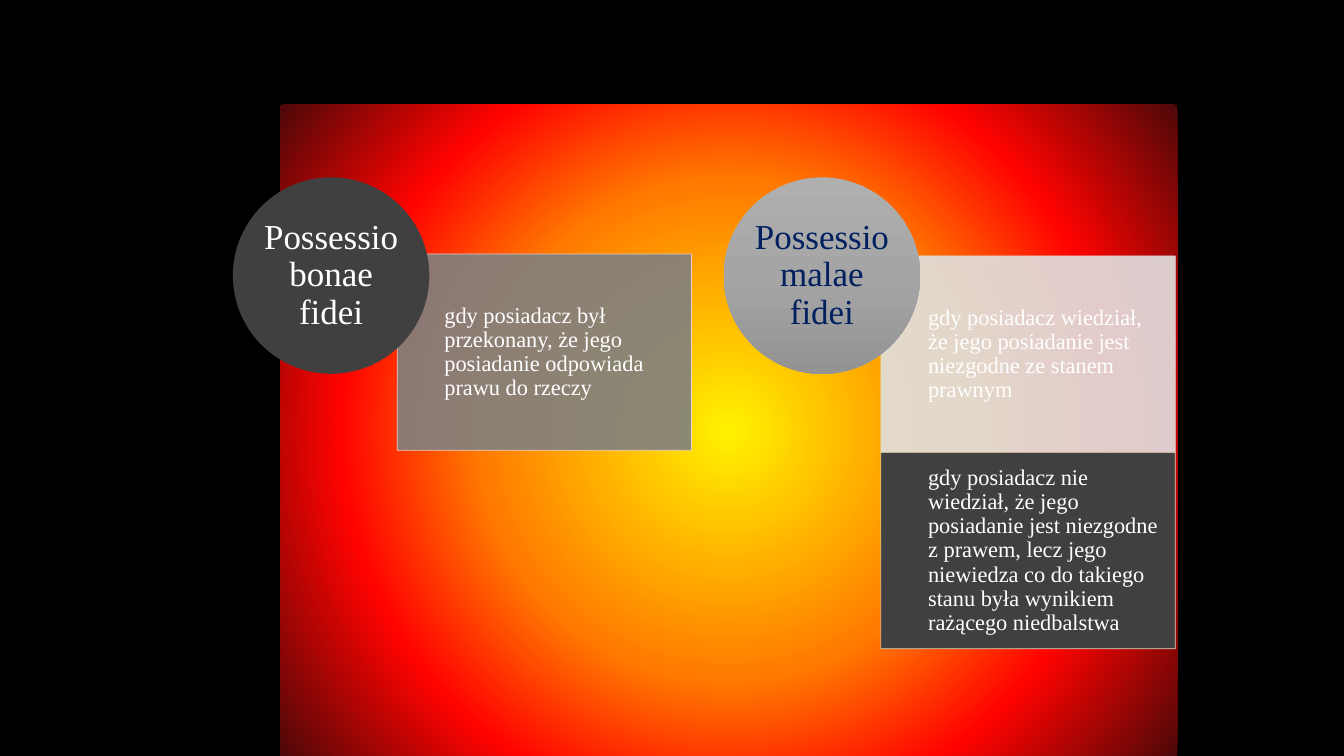
from lxml import etree
from pptx import Presentation
from pptx.dml.color import RGBColor
from pptx.enum.shapes import MSO_SHAPE
from pptx.enum.text import MSO_ANCHOR, PP_ALIGN
from pptx.oxml import parse_xml
from pptx.oxml.ns import nsdecls, qn
from pptx.util import Cm, Pt

RECTANGLE, OVAL = MSO_SHAPE.RECTANGLE, MSO_SHAPE.OVAL
MIDDLE = MSO_ANCHOR.MIDDLE
LEFT, CENTER = PP_ALIGN.LEFT, PP_ALIGN.CENTER

COLORS = {
    "background": "000000", "white": "FFFFFF", "navy": "002060",
    "dark": "404040", "gray": "808080", "light": "E1E1E1",
    "pink line": "F8D7CE", "cream line": "FFE8CC",
}
GLOW = [(0, "FFF200"), (45, "FF7A00"), (70, "FF0300"), (100, "4D0808")]
SILVER = [(0, "AFAFAF"), (50, "A5A5A5"), (100, "939393")]
RADIAL = ('<a:path path="circle">'
          '<a:fillToRect l="50000" t="50000" r="50000" b="50000"/></a:path>')
DOWNWARD = '<a:lin ang="5400000" scaled="0"/>'
SIDE = 4.95
BOX_WIDTH = 7.42


def add_panel(kind, left, top, width, height, fill, direction=""):
    shape = page.shapes.add_shape(kind, Cm(left), Cm(top), Cm(width), Cm(height))
    shape.shadow.inherit = False
    shape.line.fill.background()
    if direction:
        stops = "".join(f'<a:gs pos="{place * 1000}"><a:srgbClr val="{color}"/></a:gs>'
                        for place, color in fill)
        gradient = parse_xml(f'<a:gradFill {nsdecls("a")} rotWithShape="1">'
                             f'<a:gsLst>{stops}</a:gsLst>{direction}</a:gradFill>')
        shape._element.spPr.find(qn("a:prstGeom")).addnext(gradient)
    else:
        shape.fill.solid()
        shape.fill.fore_color.rgb = RGBColor.from_string(COLORS[fill])
    return shape


def write_text(shape, text, size, color, align, insets):
    frame = shape.text_frame
    frame.word_wrap = True
    frame.vertical_anchor = MIDDLE
    frame.margin_left, other = Cm(insets[0]), Cm(insets[1])
    frame.margin_top = frame.margin_right = frame.margin_bottom = other
    paragraph = frame.paragraphs[0]
    paragraph.text = text
    paragraph.alignment = align
    paragraph.line_spacing = 0.9
    paragraph.font.name = "Times New Roman"
    paragraph.font.size = Pt(size)
    paragraph.font.color.rgb = RGBColor.from_string(COLORS[color])


deck = Presentation()
deck.slide_width, deck.slide_height = Cm(33.87), Cm(19.05)
page = deck.slides.add_slide(deck.slide_layouts[6])
page.background.fill.solid()
page.background.fill.fore_color.rgb = RGBColor.from_string(COLORS["background"])

add_panel(RECTANGLE, 7.06, 2.64, 22.61, 16.41, GLOW, RADIAL)

definitions = [
    (10.01, 6.4, "gray", "pink line", 90,
     "gdy posiadacz był przekonany, że jego posiadanie odpowiada prawu do rzeczy"),
    (22.2, 6.45, "light", "light", 90,
     "gdy posiadacz wiedział, że jego posiadanie jest niezgodne ze stanem prawnym"),
    (22.2, 6.45 + SIDE, "dark", "cream line", 100,
     "gdy posiadacz nie wiedział, że jego posiadanie jest niezgodne z prawem, "
     "lecz jego niewiedza co do takiego stanu była wynikiem rażącego niedbalstwa"),
]
for left, top, fill, line, opacity, text in definitions:
    box = add_panel(RECTANGLE, left, top, BOX_WIDTH, SIDE, fill)
    box.line.color.rgb = RGBColor.from_string(COLORS[line])
    box.line.width = Pt(0.5)
    properties = box._element.spPr
    for part, percent in (("a:solidFill", opacity), ("a:ln/a:solidFill", 90)):
        color = properties.find(f"{part}/a:srgbClr", properties.nsmap)
        etree.SubElement(color, qn("a:alpha"), val=str(percent * 1000))
    write_text(box, text, 16, "white", LEFT, (1.19, 0.3))

circles = [
    (5.87, "dark", "", "white", "Possessio bonae fidei"),
    (18.24, SILVER, DOWNWARD, "navy", "Possessio malae fidei"),
]
for left, fill, direction, color, text in circles:
    circle = add_panel(OVAL, left, 4.47, SIDE, SIDE, fill, direction)
    write_text(circle, text, 25, color, CENTER, (0, 0))

deck.save("out.pptx")
